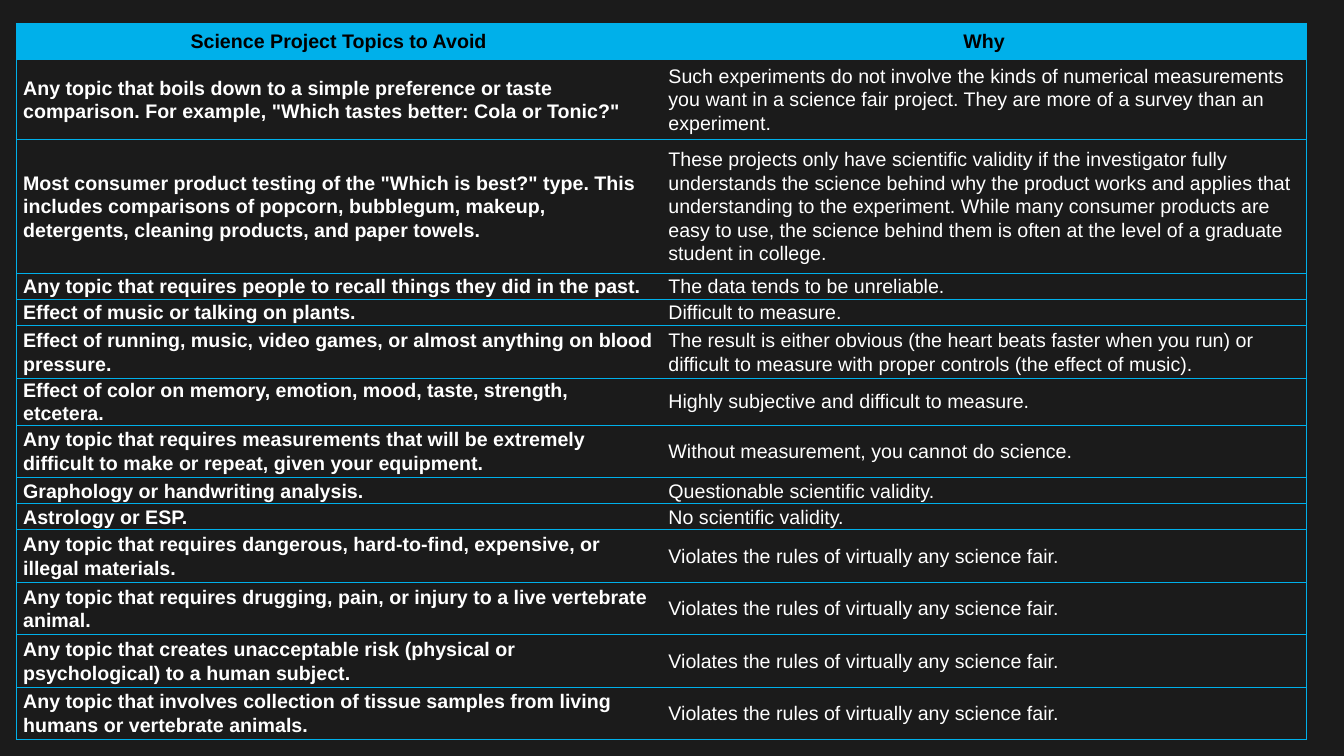
from dataclasses import dataclass

from lxml import etree
from pptx import Presentation
from pptx.dml.color import RGBColor
from pptx.enum.text import MSO_ANCHOR, PP_ALIGN
from pptx.oxml.ns import qn
from pptx.util import Inches, Pt

MIDDLE = MSO_ANCHOR.MIDDLE
LEFT, CENTER = PP_ALIGN.LEFT, PP_ALIGN.CENTER


@dataclass(frozen=True)
class Theme:
    back: str = "1B1B1B"
    accent: str = "00B0EA"
    dark: str = "000000"
    light: str = "FFFFFF"
    font: str = "Arial"
    size: int = 14
    lead: float = 1.07
    rule: float = 0.5


@dataclass(frozen=True)
class Entry:
    topic: str
    why: str
    high: float


THEME = Theme()
SINGLE, DOUBLE = 0.26, 0.52
RULES = "Violates the rules of virtually any science fair."
CELL = {
    "margin_left": Inches(0.07),
    "margin_right": Inches(0.07),
    "margin_top": 0,
    "margin_bottom": 0,
    "vertical_anchor": MIDDLE,
}

ENTRIES = [
    Entry("Science Project Topics to Avoid", "Why", 0.36),
    Entry('Any topic that boils down to a simple preference or taste comparison. '
          'For example, "Which tastes better: Cola or Tonic?"',
          "Such experiments do not involve the kinds of numerical measurements "
          "you want in a science fair project. They are more of a survey than an "
          "experiment.", 0.79),
    Entry('Most consumer product testing of the "Which is best?" type. This '
          "includes comparisons of popcorn, bubblegum, makeup, detergents, "
          "cleaning products, and paper towels.",
          "These projects only have scientific validity if the investigator fully "
          "understands the science behind why the product works and applies that "
          "understanding to the experiment. While many consumer products are easy "
          "to use, the science behind them is often at the level of a graduate "
          "student in college.", 1.33),
    Entry("Any topic that requires people to recall things they did in the past.",
          "The data tends to be unreliable.", SINGLE),
    Entry("Effect of music or talking on plants.", "Difficult to measure.", SINGLE),
    Entry("Effect of running, music, video games, or almost anything on blood "
          "pressure.",
          "The result is either obvious (the heart beats faster when you run) or "
          "difficult to measure with proper controls (the effect of music).", DOUBLE),
    Entry("Effect of color on memory, emotion, mood, taste, strength, etcetera.",
          "Highly subjective and difficult to measure.", SINGLE),
    Entry("Any topic that requires measurements that will be extremely difficult "
          "to make or repeat, given your equipment.",
          "Without measurement, you cannot do science.", DOUBLE),
    Entry("Graphology or handwriting analysis.",
          "Questionable scientific validity.", SINGLE),
    Entry("Astrology or ESP.", "No scientific validity.", SINGLE),
    Entry("Any topic that requires dangerous, hard-to-find, expensive, or illegal "
          "materials.", RULES, DOUBLE),
    Entry("Any topic that requires drugging, pain, or injury to a live vertebrate "
          "animal.", RULES, DOUBLE),
    Entry("Any topic that creates unacceptable risk (physical or psychological) "
          "to a human subject.", RULES, DOUBLE),
    Entry("Any topic that involves collection of tissue samples from living "
          "humans or vertebrate animals.", RULES, DOUBLE),
]


def add_rules(cell, inner: str) -> None:
    """Rule every side of a cell except the one facing the other column."""
    props = cell._tc.get_or_add_tcPr()
    for side in ("lnL", "lnR", "lnT", "lnB"):
        line = etree.SubElement(props, qn(f"a:{side}"), w=str(Pt(THEME.rule)))
        if side == inner:
            etree.SubElement(line, qn("a:noFill"))
        else:
            fill = etree.SubElement(line, qn("a:solidFill"))
            etree.SubElement(fill, qn("a:srgbClr"), val=THEME.accent)


def fill_cell(cell, text: str, head: bool, first: bool) -> None:
    """Write and style one table cell."""
    for name, value in CELL.items():
        setattr(cell, name, value)
    add_rules(cell, "lnR" if first else "lnL")
    if head:
        cell.fill.solid()
        cell.fill.fore_color.rgb = RGBColor.from_string(THEME.accent)
    else:
        cell.fill.background()

    para = cell.text_frame.paragraphs[0]
    para.alignment = CENTER if head else LEFT
    para.line_spacing = THEME.lead
    run = para.add_run()
    run.text = text
    style = {"name": THEME.font, "size": Pt(THEME.size), "bold": head or first}
    for name, value in style.items():
        setattr(run.font, name, value)
    run.font.color.rgb = RGBColor.from_string(THEME.dark if head else THEME.light)


def add_topics(slide) -> None:
    """Draw the table of topics and reasons."""
    high = sum(entry.high for entry in ENTRIES)
    frame = slide.shapes.add_table(len(ENTRIES), 2, Inches(0.16), Inches(0.23),
                                   Inches(12.8), Inches(high))
    table = frame.table
    table.first_row = table.horz_banding = False
    for index, entry in enumerate(ENTRIES):
        table.rows[index].height = Inches(entry.high)
        for col, text in enumerate((entry.topic, entry.why)):
            fill_cell(table.cell(index, col), text, index == 0, col == 0)


def main() -> None:
    deck = Presentation()
    deck.slide_width, deck.slide_height = Inches(13.33), Inches(7.5)
    slide = deck.slides.add_slide(deck.slide_layouts[6])

    # Dark background
    back = slide.background.fill
    back.solid()
    back.fore_color.rgb = RGBColor.from_string(THEME.back)

    # Table
    add_topics(slide)
    deck.save("out.pptx")


if __name__ == "__main__":
    main()
